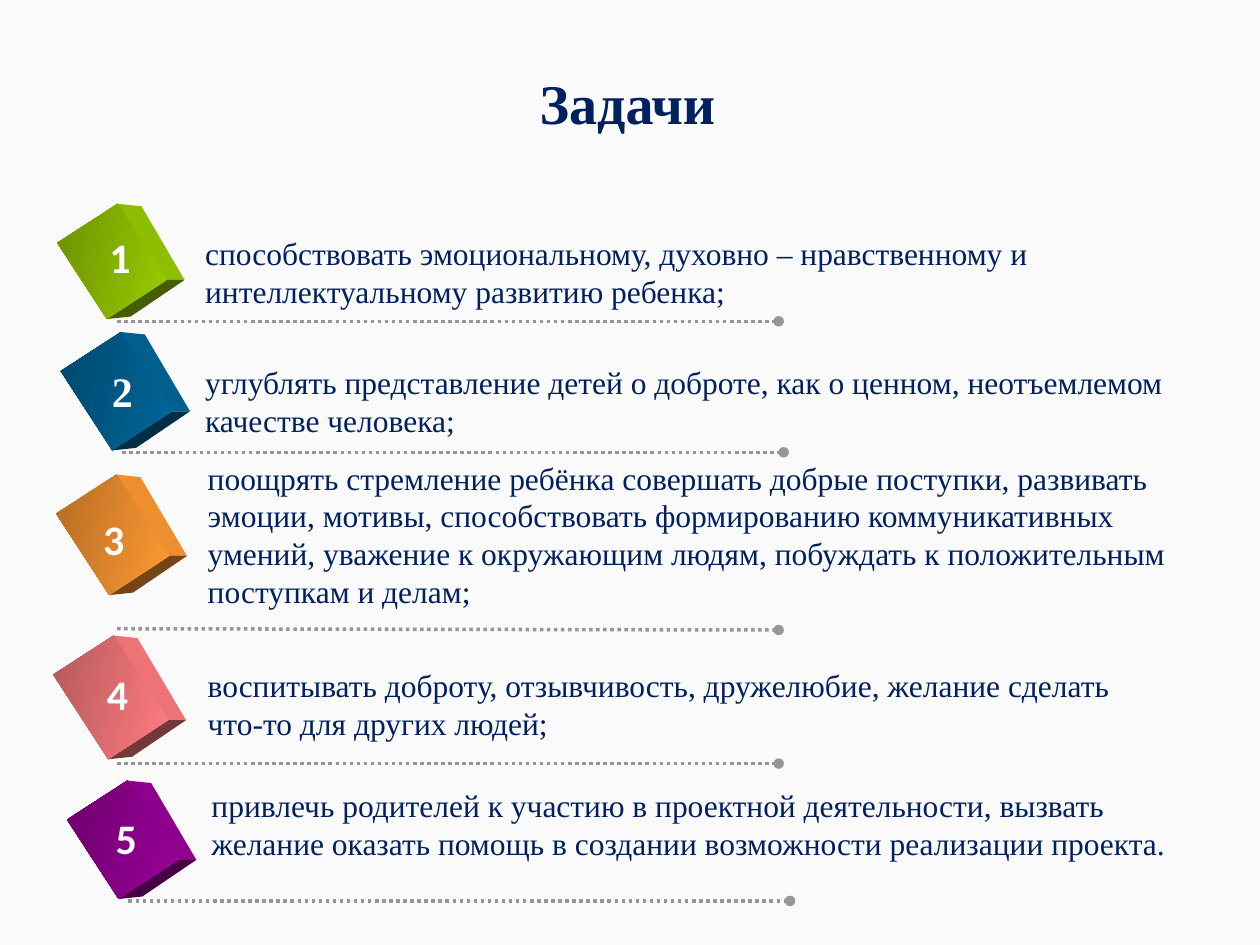
from math import cos, radians, sin

from lxml import etree
from pptx import Presentation
from pptx.dml.color import RGBColor
from pptx.enum.dml import MSO_LINE
from pptx.enum.shapes import MSO_CONNECTOR, MSO_SHAPE
from pptx.enum.text import MSO_ANCHOR, PP_ALIGN
from pptx.oxml.ns import qn
from pptx.util import Inches, Pt

RECT = MSO_SHAPE.RECTANGLE
LINE = MSO_CONNECTOR.STRAIGHT
DOT = MSO_LINE.ROUND_DOT
MID, TOP = MSO_ANCHOR.MIDDLE, MSO_ANCHOR.TOP
LEFT, CENTER = PP_ALIGN.LEFT, PP_ALIGN.CENTER

HUES = {
    "back": "FAFAFA", "navy": "002060", "rule": "969696", "white": "FFFFFF",
    "green": "99CC00", "blue": "006699", "orange": "FF9933",
    "pink": "FF7C80", "purple": "990099",
}
SERIF, SANS = "Times New Roman", "Calibri"
TILT, TALL, SPAN = 57, 0.57, 5.25

# hue, tile (left, top, width), number box, number font, text box, rule start, rule drop, text
TASKS = [
    ("green", (0.53, 1.79, 0.72), (0.77, 1.79, 0.39, 0.69), SANS,
     (1.53, 1.81, 8.24, 0.71), (0.93, 2.55), 0,
     "способствовать эмоциональному, духовно – нравственному и "
     "интеллектуальному развитию ребенка;"),
    ("blue", (0.55, 2.82, 0.75), (0.79, 2.85, 0.37, 0.5), SERIF,
     (1.53, 2.83, 7.86, 0.71), (0.97, 3.59), 0,
     "углублять представление детей о доброте, как о ценном, "
     "неотъемлемом качестве человека;"),
    ("orange", (0.51, 3.96, 0.77), (0.72, 4.03, 0.35, 0.55), SANS,
     (1.55, 3.59, 7.85, 1.31), (0.93, 4.99), 0.01,
     "поощрять стремление ребёнка совершать добрые поступки, развивать "
     "эмоции, мотивы, способствовать формированию коммуникативных умений, "
     "уважение к окружающим людям, побуждать к положительным поступкам "
     "и делам;"),
    ("pink", (0.48, 5.25, 0.8), (0.75, 5.26, 0.39, 0.77), SANS,
     (1.55, 5.24, 7.77, 0.71), (0.93, 6.06), 0,
     "воспитывать доброту, отзывчивость, дружелюбие, желание сделать "
     "что-то для других людей;"),
    ("purple", (0.6, 6.38, 0.75), (0.82, 6.4, 0.39, 0.71), SANS,
     (1.58, 6.19, 7.99, 0.71), (1.02, 7.15), 0,
     "привлечь родителей к участию в проектной деятельности, вызвать "
     "желание оказать помощь в создании возможности реализации проекта."),
]


def shade(hue, part=1.0):
    """Return the named colour, darkened to the given part of its light."""
    return RGBColor(*(round(v * part) for v in RGBColor.from_string(HUES[hue])))


class Page:
    """Holds the slide and the shape list that new elements go into."""

    def __init__(self, slide):
        self.slide = slide
        self.shapes = slide.shapes
        fill = slide.background.fill
        fill.solid()
        fill.fore_color.rgb = shade("back")

    def group(self):
        self.shapes = self.slide.shapes.add_group_shape().shapes

    def text(self, box, words, size, hue="navy", face=SERIF, bold=False,
             align=LEFT, anchor=TOP, wrap=True, space=1.0):
        frame = self.shapes.add_textbox(*map(Inches, box)).text_frame
        frame.word_wrap = wrap
        frame.vertical_anchor = anchor
        frame.text = words
        para = frame.paragraphs[0]
        para.alignment = align
        para.line_spacing = space
        font = para.runs[0].font
        font.name, font.size, font.bold = face, Pt(size), bold
        font.color.rgb = shade(hue)

    def rule(self, start, drop):
        x, y = start
        ends = (x, y, x + SPAN, y + drop)
        line = self.shapes.add_connector(LINE, *map(Inches, ends))
        line.line.color.rgb = shade("rule")
        line.line.width = Pt(2)
        line.line.dash_style = DOT
        etree.SubElement(line.line._get_or_add_ln(), qn("a:tailEnd"), type="oval")
        etree.SubElement(line._element.spPr, qn("a:effectLst"))

    def face(self, points, color):
        spots = [(Inches(x), Inches(y)) for x, y in points]
        pen = self.shapes.build_freeform(*spots[0], scale=1.0)
        pen.add_line_segments(spots[1:], close=True)
        shape = pen.convert_to_shape()
        shape.shadow.inherit = False
        shape.fill.solid()
        shape.fill.fore_color.rgb = color
        shape.line.fill.background()

    def cube(self, left, top, wide, hue):
        """Draw a tilted front tile with the two faces seen behind it."""
        turn = radians(TILT)
        mid = left + wide / 2, top + TALL / 2

        def corner(across, down, dx=0, dy=0):
            u, v = across * wide / 2, down * TALL / 2
            return (mid[0] + u * cos(turn) - v * sin(turn) + dx,
                    mid[1] + u * sin(turn) + v * cos(turn) + dy)

        peak, edge, foot = corner(-1, -1), corner(1, -1), corner(1, 1)
        far = corner(1, -1, 0.14)
        self.face([peak, corner(-1, -1, 0.19, 0.02), far, edge], shade(hue, 0.93))
        self.face([foot, edge, far, corner(1, 1, 0.19, -0.02)], shade(hue, 0.45))

        front = self.shapes.add_shape(RECT, *map(Inches, (left, top, wide, TALL)))
        front.rotation = TILT
        front.shadow.inherit = False
        front.line.fill.background()
        front.fill.gradient()
        front.fill.gradient_angle = 225
        for stop, part in zip(front.fill.gradient_stops, (1, 0.714)):
            stop.color.rgb = shade(hue, part)


def main():
    deck = Presentation()
    deck.slide_width, deck.slide_height = Inches(10), Inches(7.5)
    page = Page(deck.slides.add_slide(deck.slide_layouts[6]))
    page.text((0.67, 0.35, 8.62, 0.98), "Задачи", 32, bold=True,
              align=CENTER, anchor=MID, space=0.9)
    for num, (hue, tile, spot, face, box, start, drop, words) in enumerate(TASKS, 1):
        page.group()
        page.rule(start, drop)
        page.cube(*tile, hue)
        page.text(box, words, 18)
        page.text(spot, str(num), 24, "white", face, bold=True, wrap=num == 3)
    deck.save("out.pptx")


if __name__ == "__main__":
    main()
